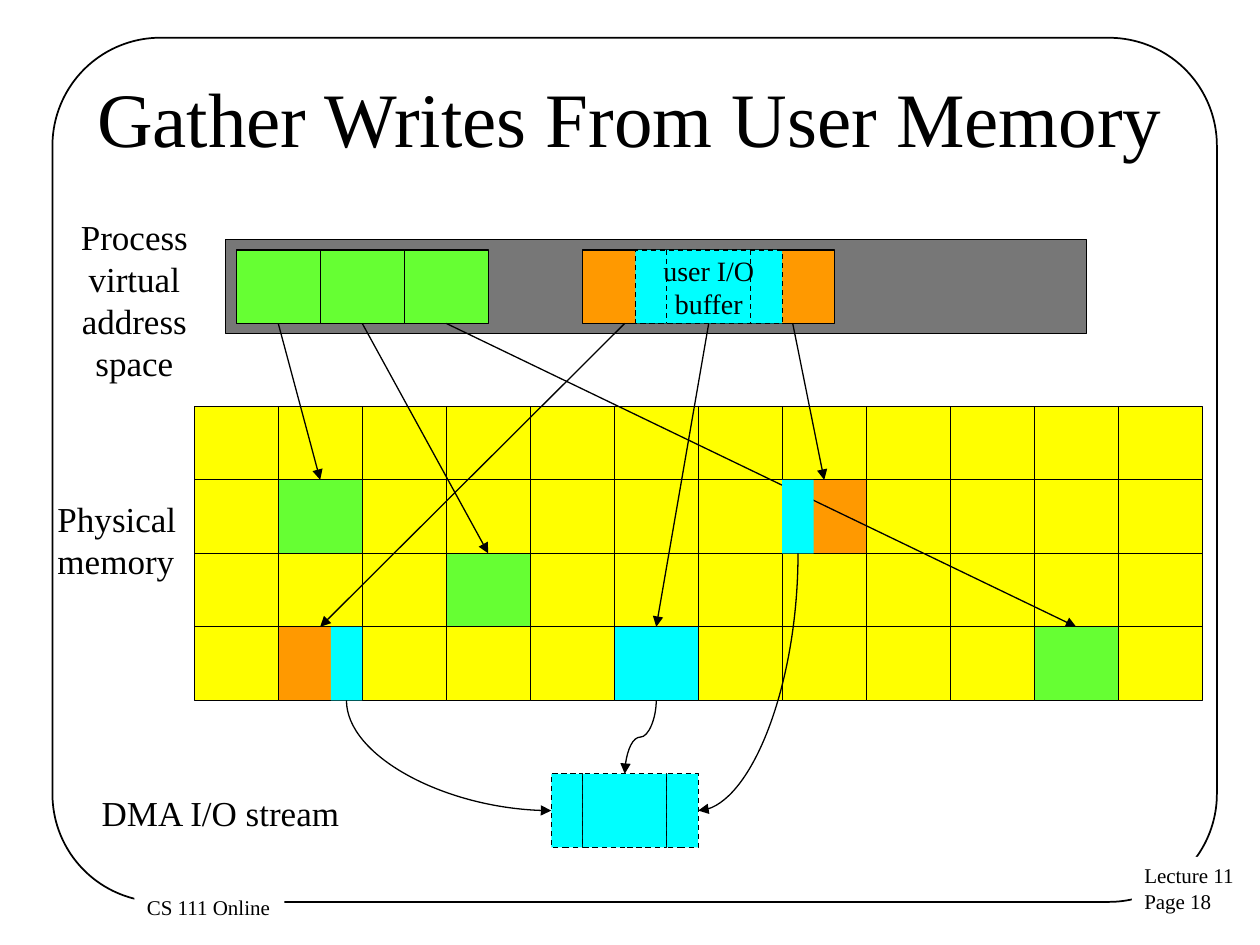
from pptx import Presentation, util as u
from pptx.dml.color import RGBColor
from pptx.enum import dml, shapes, text
from pptx.oxml.ns import qn
from lxml import etree

SCALE = 7620  # EMU per px, 120 px to the inch
FONT = "Times New Roman"
BLACK, WHITE, GRAY = "000000", "FFFFFF", "777777"
YELLOW, GREEN, ORANGE, CYAN = "FFFF00", "66FF33", "FF9900", "00FFFF"

TITLE = "Gather Writes From User Memory"
LABELS = [  # lines, left, top, width, height, centred
    (["Process virtual address space"], 43, 199, 170, 174, True),
    (["Physical memory"], 43, 468, 170, 92, False),
    (["DMA I/O stream"], 85, 748, 280, 53, False),
]
FOOTERS = [
    (["Lecture 11", "Page 18"], 1078, 816, 110, 61),
    (["CS 111 Online"], 128, 846, 143, 36),
]
BUFFER_LINES = ["user I/O", "buffer"]

CELL_W, CELL_H, PIECE_W = 80, 70, 30
ROWS, COLS = 4, 12
GRID_LEFT, GRID_TOP = 185, 387
SPACE_TOP, STREAM_TOP = 238, 737
# virtual page: left, colour, (row, column) of its frame in physical memory
PAGES = [
    (225, GREEN, (1, 1)),
    (305, GREEN, (2, 3)),
    (385, GREEN, (3, 10)),
    (555, ORANGE, (3, 1)),
    (635, ORANGE, (3, 5)),
    (715, ORANGE, (1, 7)),
]
FULL_BUFFER_FRAME = (3, 5)
# stream part: left, width, connection site reached by its curve
STREAM = [(525, PIECE_W, 1), (555, CELL_W, 0), (635, PIECE_W, 3)]


def px(value):
    return u.Emu(int(value * SCALE))


def color(hex_code):
    return RGBColor.from_string(hex_code)


def style_line(line, width=0.75, dashed=False):
    line.color.rgb = color(BLACK)
    line.width = u.Pt(width)
    if dashed:
        line.dash_style = dml.MSO_LINE.DASH


def add_box(page, left, top, width, height, fill, outlined=True, dashed=False):
    box = page.shapes.add_shape(shapes.MSO_SHAPE.RECTANGLE,
                                px(left), px(top), px(width), px(height))
    box.shadow.inherit = False
    box.fill.solid()
    box.fill.fore_color.rgb = color(fill)
    if outlined:
        style_line(box.line, dashed=dashed)
    else:
        box.line.fill.background()
    return box


def write(box, lines, size, centred=False, wrap=True):
    frame = box.text_frame
    frame.word_wrap = wrap
    frame.text = "\n".join(lines)
    for para in frame.paragraphs:
        para.alignment = text.PP_ALIGN.CENTER if centred else text.PP_ALIGN.LEFT
        para.font.name, para.font.size = FONT, u.Pt(size)
        para.font.color.rgb = color(BLACK)


def add_text(page, lines, left, top, width, height, size, **options):
    box = page.shapes.add_textbox(px(left), px(top), px(width), px(height))
    write(box, lines, size, **options)
    return box


def add_line(page, kind, start=(0, 0), end=(0, 0), arrow=False, dashed=False):
    line = page.shapes.add_connector(kind, *map(px, start + end))
    style_line(line.line, dashed=dashed)
    etree.SubElement(line._element.spPr, qn("a:effectLst"))
    if arrow:
        etree.SubElement(line.line._get_or_add_ln(), qn("a:tailEnd"), type="triangle")
    return line


def add_arrow(page, source, target):
    arrow = add_line(page, shapes.MSO_CONNECTOR.STRAIGHT, arrow=True)
    arrow.begin_connect(source, 2)
    arrow.end_connect(target, 0)


def add_curve(page, source, target, site):
    """Leave the bottom of source downwards and enter target at the given site."""
    curve = add_line(page, shapes.MSO_CONNECTOR.CURVE, arrow=True)
    curve.begin_connect(source, 2)
    curve.end_connect(target, site)
    start_x, start_y, end_x, end_y = curve.begin_x, curve.begin_y, curve.end_x, curve.end_y
    rightward = end_x > start_x
    # A quarter turn swaps width and height around the same centre.
    across, down = abs(end_x - start_x), end_y - start_y
    curve.left = u.Emu((start_x + end_x - down) // 2)
    curve.top = u.Emu((start_y + end_y - across) // 2)
    curve.width, curve.height = u.Emu(down), u.Emu(across)
    properties = curve._element.spPr
    transform = properties.find(qn("a:xfrm"))
    transform.set("rot", "16200000" if rightward else "5400000")
    transform.set("flipH", "1" if rightward else "0")
    transform.set("flipV", "0")
    if site != 0:
        properties.find(qn("a:prstGeom")).set("prst", "curvedConnector2")


def add_frame(page):
    border = page.shapes.add_shape(shapes.MSO_SHAPE.ROUNDED_RECTANGLE,
                                   px(50), px(36), px(1109), px(823))
    border.adjustments[0] = 0.125
    border.shadow.inherit = False
    border.fill.background()
    style_line(border.line, 1)
    for footer in FOOTERS:
        box = add_text(page, *footer, size=12, wrap=False)
        box.fill.solid()
        box.fill.fore_color.rgb = color(WHITE)


def add_title(page):
    title = page.shapes.title
    title.left, title.top, title.width, title.height = map(px, (60, 36, 1080, 150))
    write(title, [TITLE], 44, centred=True)
    title.text_frame.auto_size = text.MSO_AUTO_SIZE.NONE
    title.text_frame.vertical_anchor = text.MSO_ANCHOR.MIDDLE


def add_memory(page):
    """Draw the address space, physical memory and the arrows between them."""
    add_box(page, 215, 228, 820, 90, GRAY)
    virtual = [add_box(page, left, SPACE_TOP, CELL_W, CELL_H, fill)
               for left, fill, _ in PAGES]
    fills = {place: fill for _, fill, place in PAGES}
    fills[FULL_BUFFER_FRAME] = CYAN
    frames = {}
    for row in range(ROWS):
        for col in range(COLS):
            frames[row, col] = add_box(
                page, GRID_LEFT + col * CELL_W, GRID_TOP + row * CELL_H,
                CELL_W, CELL_H, fills.get((row, col), YELLOW))
    for source, (_, _, place) in zip(virtual, PAGES):
        add_arrow(page, source, frames[place])
    return frames


def add_buffer(page, frames):
    """Draw the user buffer, its pieces in memory and the gathered stream."""
    first_page, middle_page, last_page = [left for left, _, _ in PAGES[3:]]
    buffer_left = middle_page - PIECE_W
    buffer = add_box(page, buffer_left, SPACE_TOP,
                     last_page + PIECE_W - buffer_left, CELL_H, CYAN, dashed=True)
    write(buffer, BUFFER_LINES, 16, centred=True, wrap=False)
    buffer.text_frame.vertical_anchor = text.MSO_ANCHOR.MIDDLE
    for edge in (middle_page, last_page):
        add_line(page, shapes.MSO_CONNECTOR.STRAIGHT, (edge, SPACE_TOP),
                 (edge, SPACE_TOP + CELL_H), dashed=True)

    def add_piece(place, offset):
        row, col = place
        return add_box(page, GRID_LEFT + col * CELL_W + offset,
                       GRID_TOP + row * CELL_H, PIECE_W, CELL_H, CYAN, outlined=False)

    sources = [add_piece(PAGES[3][2], CELL_W - PIECE_W),
               frames[FULL_BUFFER_FRAME],
               add_piece(PAGES[5][2], 0)]
    parts = [add_box(page, left, STREAM_TOP, width, CELL_H, CYAN, dashed=True)
             for left, width, _ in STREAM]
    for source, part, (_, _, site) in zip(sources, parts, STREAM):
        add_curve(page, source, part, site)


def main():
    deck = Presentation()
    deck.slide_width, deck.slide_height = px(1200), px(900)
    page = deck.slides.add_slide(deck.slide_layouts[5])
    add_frame(page)
    add_title(page)
    frames = add_memory(page)
    for *label, centred in LABELS:
        add_text(page, *label, size=20, centred=centred)
    add_buffer(page, frames)
    deck.save("out.pptx")


if __name__ == "__main__":
    main()
